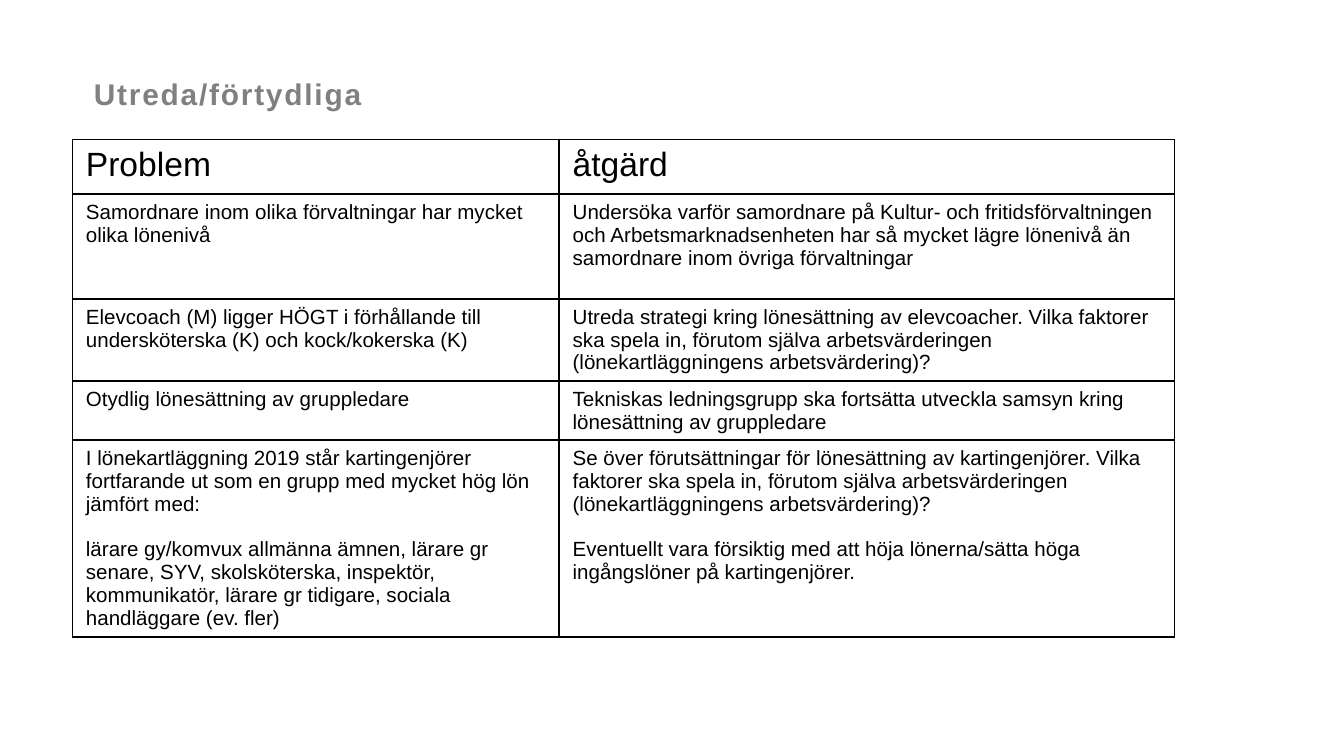
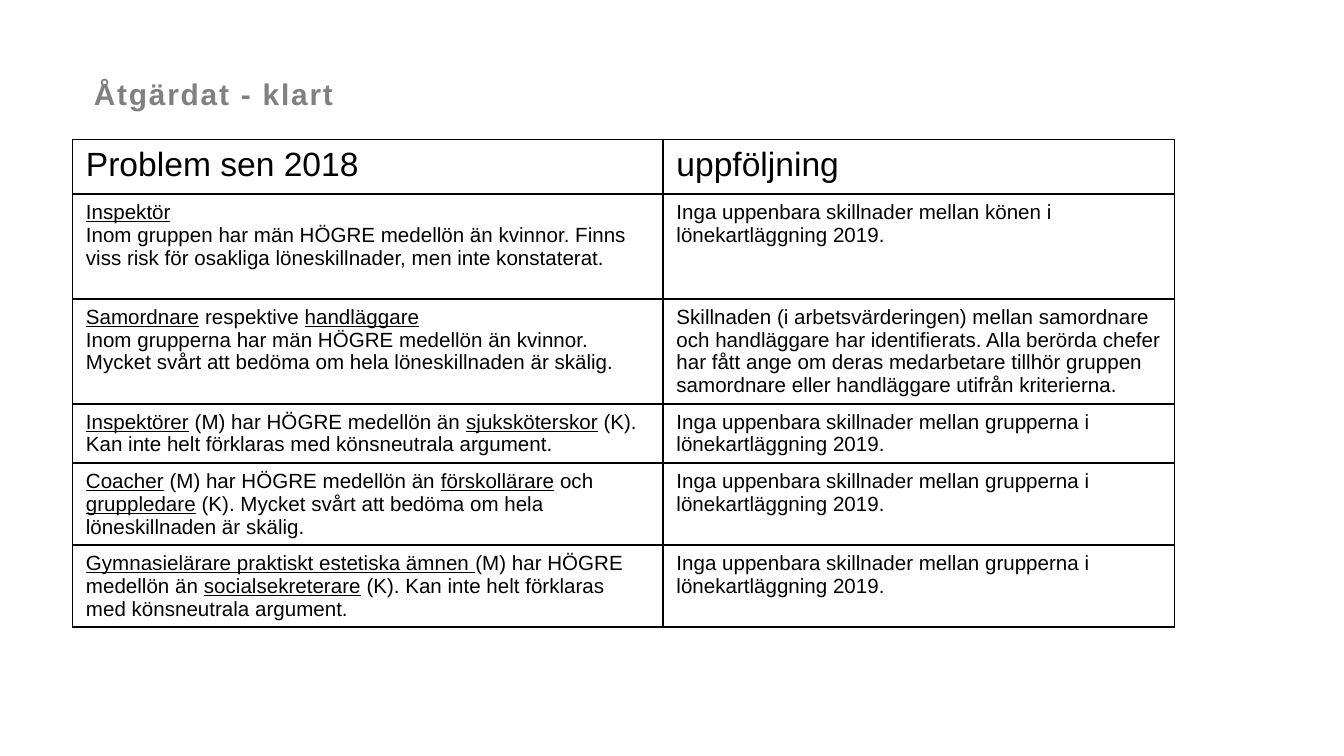
import pptx
import pptx.dml.color
import pptx.enum.text
import pptx.oxml.ns
import pptx.util
from lxml import etree

Cm = pptx.util.Cm
Pt = pptx.util.Pt

FONT = "Arial"
BLACK, GREY = "000000", "808080"
TITLE_BOX = (1.52, 1.27, 17.86, 0.58)
TABLE_CORNER = (1.37, 2.64)
HEADER_HEIGHT = 1.03
PARAGRAPH_GAP = 12.2

TITLE_FORMAT = {"name": FONT, "size": Pt(16), "bold": True}
HEADER_FORMAT = {"name": FONT, "size": Pt(18)}
BODY_FORMAT = {"name": FONT, "size": Pt(11)}

NO_GROUP_GAP = "Inga uppenbara skillnader mellan grupperna i lönekartläggning 2019."
GENDER_ARGUMENT = "Kan inte helt förklaras med könsneutrala argument."

# Cell text: underscores enclose underlined words, \n starts a paragraph,
# \n\n starts a paragraph with a gap above it. Each row begins with its height.
SLIDES = [
    {
        "title": "Utreda/förtydliga",
        "columns": (9.2, 11.63),
        "header": ("Problem", "åtgärd"),
        "rows": [
            (1.98, "Samordnare inom olika förvaltningar har mycket olika lönenivå",
             "Undersöka varför samordnare på Kultur- och fritidsförvaltningen och "
             "Arbetsmarknadsenheten har så mycket lägre lönenivå än samordnare inom "
             "övriga förvaltningar"),
            (1.55, "Elevcoach (M) ligger HÖGT i förhållande till undersköterska (K) och "
             "kock/kokerska (K)",
             "Utreda strategi kring lönesättning av elevcoacher. Vilka faktorer ska "
             "spela in, förutom själva arbetsvärderingen (lönekartläggningens "
             "arbetsvärdering)?"),
            (1.12, "Otydlig lönesättning av gruppledare",
             "Tekniskas ledningsgrupp ska fortsätta utveckla samsyn kring "
             "lönesättning av gruppledare"),
            (3.72, "I lönekartläggning 2019 står kartingenjörer fortfarande ut som en "
             "grupp med mycket hög lön jämfört med:\n\n"
             "lärare gy/komvux allmänna ämnen, lärare gr senare, SYV, skolsköterska, "
             "inspektör, kommunikatör, lärare gr tidigare, sociala handläggare (ev. fler)",
             "Se över förutsättningar för lönesättning av kartingenjörer. Vilka "
             "faktorer ska spela in, förutom själva arbetsvärderingen "
             "(lönekartläggningens arbetsvärdering)?\n\n"
             "Eventuellt vara försiktig med att höja lönerna/sätta höga ingångslöner "
             "på kartingenjörer."),
        ],
    },
    {
        "title": "Åtgärdat - klart",
        "columns": (11.16, 9.67),
        "header": ("Problem sen 2018", "uppföljning"),
        "rows": [
            (1.98, "_Inspektör_\nInom gruppen har män HÖGRE medellön än kvinnor. Finns "
             "viss risk för osakliga löneskillnader, men inte konstaterat.",
             "Inga uppenbara skillnader mellan könen i lönekartläggning 2019."),
            (1.98, "_Samordnare_ respektive _handläggare_\nInom grupperna har män HÖGRE "
             "medellön än kvinnor. Mycket svårt att bedöma om hela löneskillnaden är "
             "skälig.",
             "Skillnaden (i arbetsvärderingen) mellan samordnare och handläggare har "
             "identifierats. Alla berörda chefer har fått ange om deras medarbetare "
             "tillhör gruppen samordnare eller handläggare utifrån kriterierna."),
            (1.12, "_Inspektörer_ (M) har HÖGRE medellön än _sjuksköterskor_ (K). "
             + GENDER_ARGUMENT, NO_GROUP_GAP),
            (1.55, "_Coacher_ (M) har HÖGRE medellön än _förskollärare_ och "
             "_gruppledare_ (K). Mycket svårt att bedöma om hela löneskillnaden är "
             "skälig.", NO_GROUP_GAP),
            (1.55, "_Gymnasielärare praktiskt estetiska ämnen _(M) har HÖGRE medellön "
             "än _socialsekreterare_ (K). " + GENDER_ARGUMENT, NO_GROUP_GAP),
        ],
    },
]


def rgb(color):
    return pptx.dml.color.RGBColor.from_string(color)


def set_attributes(target, values):
    for name, value in values.items():
        setattr(target, name, value)


def format_font(font, values, color):
    set_attributes(font, values)
    font.color.rgb = rgb(color)


def add_title(slide, text, box):
    left, top, width, height = map(Cm, box)
    title = slide.shapes.title
    set_attributes(title, {"left": left, "top": top, "width": width, "height": height})
    set_attributes(title.text_frame, {
        "margin_top": Cm(0.16),
        "word_wrap": True,
        "auto_size": pptx.enum.text.MSO_AUTO_SIZE.NONE,
        "vertical_anchor": pptx.enum.text.MSO_ANCHOR.TOP,
    })
    paragraph = title.text_frame.paragraphs[0]
    paragraph.alignment = pptx.enum.text.PP_ALIGN.LEFT
    run = paragraph.add_run()
    run.text = text
    format_font(run.font, TITLE_FORMAT, GREY)
    # Letter spacing of one point
    run._r.get_or_add_rPr().set("spc", "100")


def add_borders(cell, color, width):
    properties = cell._tc.get_or_add_tcPr()
    for edge in ("a:lnL", "a:lnR", "a:lnT", "a:lnB"):
        line = etree.SubElement(properties, pptx.oxml.ns.qn(edge), w=str(Pt(width)))
        fill = etree.SubElement(line, pptx.oxml.ns.qn("a:solidFill"))
        etree.SubElement(fill, pptx.oxml.ns.qn("a:srgbClr"), val=color)


def fill_cell(cell, text, values):
    add_borders(cell, BLACK, 1)
    cell.fill.background()
    gap_above = False
    paragraph = cell.text_frame.paragraphs[0]
    for index, line in enumerate(text.split("\n")):
        if not line:
            gap_above = True
            continue
        if index:
            paragraph = cell.text_frame.add_paragraph()
        if gap_above:
            paragraph.space_before = Pt(PARAGRAPH_GAP)
            gap_above = False
        # Every second piece stands between underscores
        for position, piece in enumerate(line.split("_")):
            if piece:
                run = paragraph.add_run()
                run.text = piece
                format_font(run.font, values, BLACK)
                if position % 2:
                    run.font.underline = True


def add_problem_table(slide, corner, columns, header, rows):
    heights = [HEADER_HEIGHT] + [row[0] for row in rows]
    texts = [header] + [row[1:] for row in rows]
    left, top = corner
    frame = slide.shapes.add_table(
        len(texts), len(columns), Cm(left), Cm(top), Cm(sum(columns)), Cm(sum(heights)))
    table = frame.table
    set_attributes(table, {"first_row": False, "horz_banding": False})
    for column, width in zip(table.columns, columns):
        column.width = Cm(width)
    for index, (row, height) in enumerate(zip(table.rows, heights)):
        row.height = Cm(height)
        values = BODY_FORMAT if index else HEADER_FORMAT
        for cell, text in zip(row.cells, texts[index]):
            fill_cell(cell, text, values)


def add_table_slide(presentation, content):
    slide = presentation.slides.add_slide(presentation.slide_layouts[5])
    add_title(slide, content["title"], TITLE_BOX)
    add_problem_table(
        slide, TABLE_CORNER, content["columns"], content["header"], content["rows"])


def main():
    presentation = pptx.Presentation()
    presentation.slide_width = Cm(25.4)
    presentation.slide_height = Cm(14.29)
    for content in SLIDES:
        add_table_slide(presentation, content)
    presentation.save("out.pptx")


if __name__ == "__main__":
    main()
